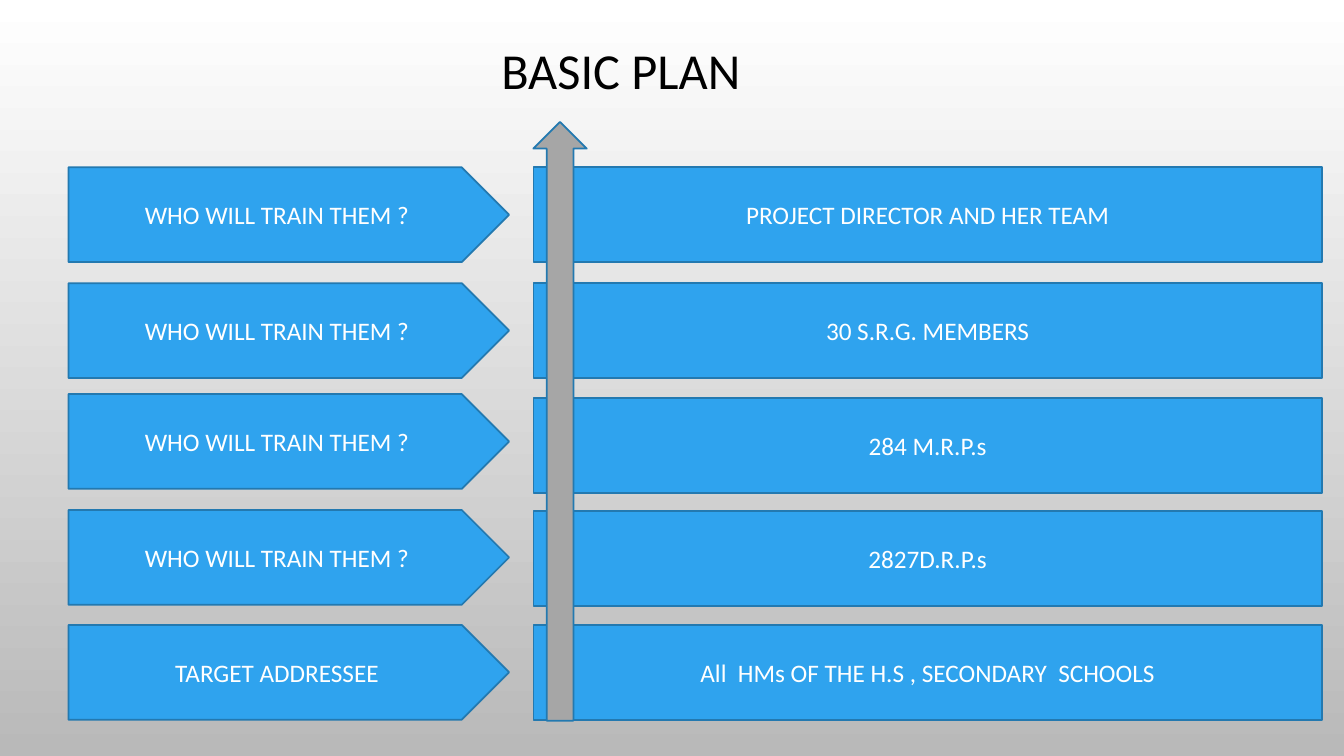
"""Build the BASIC PLAN slide: five question and answer rows with a rising arrow."""
from pptx import Presentation
from pptx.dml.color import RGBColor
from pptx.enum.shapes import MSO_SHAPE
from pptx.enum.text import MSO_ANCHOR, MSO_AUTO_SIZE, PP_ALIGN
from pptx.util import Inches, Pt

PENTAGON, RECTANGLE, UP_ARROW = MSO_SHAPE.PENTAGON, MSO_SHAPE.RECTANGLE, MSO_SHAPE.UP_ARROW
CENTER, MIDDLE, NO_FIT = PP_ALIGN.CENTER, MSO_ANCHOR.MIDDLE, MSO_AUTO_SIZE.NONE
WHITE = RGBColor(0xFF, 0xFF, 0xFF)
BLACK = RGBColor(0x00, 0x00, 0x00)
SILVER = RGBColor(0xB9, 0xB9, 0xB9)
GRAY = RGBColor(0xA6, 0xA6, 0xA6)
BLUE = RGBColor(0x2F, 0xA3, 0xEE)
DARK_BLUE = RGBColor(0x23, 0x79, 0xB0)

QUESTION = "WHO WILL TRAIN THEM ?"
ROWS = [
    (QUESTION, 1.66, "PROJECT DIRECTOR AND HER TEAM", 1.66),
    (QUESTION, 2.81, "30 S.R.G. MEMBERS", 2.81),
    (QUESTION, 3.91, "284 M.R.P.s", 3.95),
    (QUESTION, 5.06, "2827D.R.P.s", 5.07),
    ("TARGET ADDRESSEE", 6.2, "All  HMs OF THE H.S , SECONDARY  SCHOOLS", 6.2),
]


def write_text(sp, text, size, color):
    tf = sp.text_frame
    tf.text = text
    tf.word_wrap = True
    tf.auto_size = NO_FIT
    tf.vertical_anchor = MIDDLE
    p = tf.paragraphs[0]
    p.alignment = CENTER
    font = p.runs[0].font
    for name, value in {"name": "Calibri", "size": Pt(size)}.items():
        setattr(font, name, value)
    font.color.rgb = color
    return p


def add_block(s, kind, left, top, width, height, fill):
    sp = s.shapes.add_shape(kind, Inches(left), Inches(top), Inches(width), Inches(height))
    sp.shadow.inherit = False
    sp.fill.solid()
    sp.fill.fore_color.rgb = fill
    sp.line.color.rgb = DARK_BLUE
    sp.line.width = Pt(1.25)
    return sp


prs = Presentation()
prs.slide_width, prs.slide_height = Inches(13.33), Inches(7.5)
s = prs.slides.add_slide(prs.slide_layouts[5])

background = s.background.fill
background.gradient()
background.gradient_angle = 270
for stop, color in zip(background.gradient_stops, (WHITE, SILVER)):
    stop.color.rgb = color

title = s.shapes.title
title.left, title.top = Inches(1.35), Inches(0.26)
title.width, title.height = Inches(9.73), Inches(0.94)
write_text(title, "BASIC PLAN ", 36, BLACK).line_spacing = 0.9

for question, question_top, answer, answer_top in ROWS:
    for kind, left, top, width, text in (
        (PENTAGON, 0.68, question_top, 4.37, question),
        (RECTANGLE, 5.29, answer_top, 7.82, answer),
    ):
        sp = add_block(s, kind, left, top, width, 0.94, BLUE)
        write_text(sp, text, 18, WHITE)

add_block(s, UP_ARROW, 5.29, 1.21, 0.53, 5.94, GRAY)

prs.save("out.pptx")
